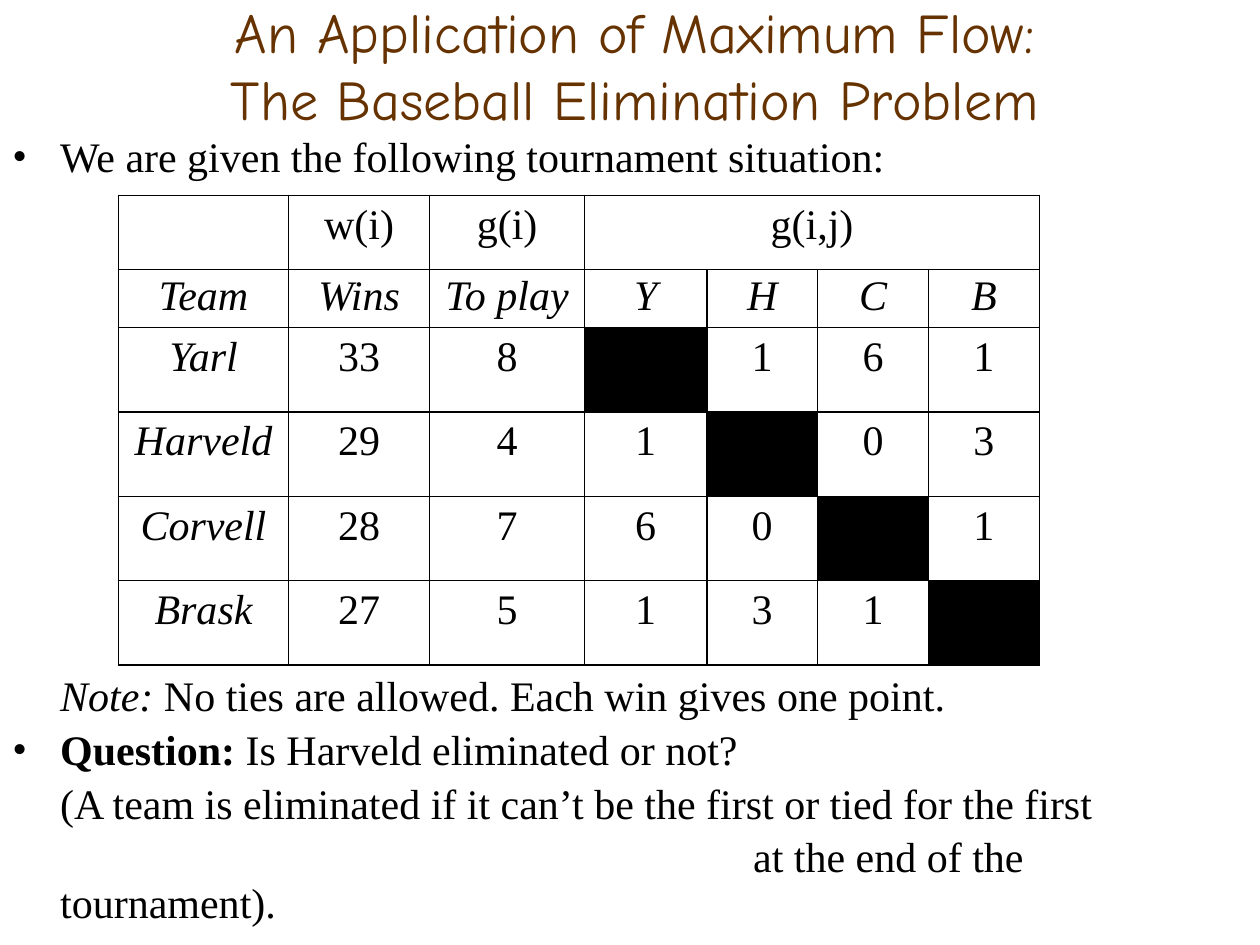
from dataclasses import dataclass

from lxml import etree
from pptx import Presentation
from pptx.dml.color import RGBColor
from pptx.enum.text import MSO_ANCHOR, MSO_AUTO_SIZE, PP_ALIGN
from pptx.oxml.ns import qn
from pptx.util import Inches, Pt

CENTER = PP_ALIGN.CENTER
MIDDLE = MSO_ANCHOR.MIDDLE
NO_AUTOFIT = MSO_AUTO_SIZE.NONE
TITLE_ONLY = 5
WIDTH, HEIGHT = 10, 7.5


@dataclass(frozen=True)
class Theme:
    title_font: str = "Comic Neue"
    body_font: str = "Times New Roman"
    title_size: int = 32
    body_size: int = 24
    brown: RGBColor = RGBColor(0x66, 0x33, 0x00)
    black: RGBColor = RGBColor(0, 0, 0)
    white: RGBColor = RGBColor(255, 255, 255)
    border: float = 1
    cell_margin: float = 0.03
    hanging: float = 0.38
    line_spacing: float = 0.9
    space_before: float = 4.8


THEME = Theme()
TITLE_FORMAT = {"name": THEME.title_font, "size": Pt(THEME.title_size), "bold": False}
BODY_FORMAT = {"name": THEME.body_font, "size": Pt(THEME.body_size)}

TITLE = "An Application of Maximum Flow:\vThe Baseball Elimination Problem"
# Each paragraph: bullet, first-line indent, runs of (text, extra format).
INTRODUCTION = [
    (True, -THEME.hanging, [("We are given the following tournament situation:", {})]),
]
QUESTION = [
    (False, 0, [("Note:", {"italic": True}),
                (" No ties are allowed. Each win gives one point.", {})]),
    (True, -THEME.hanging, [("Question:", {"bold": True}),
                            (" Is Harveld eliminated or not?", {})]),
    (False, 0, [("(A team is eliminated if it can’t be the first or tied for the first", {})]),
    (False, 5.5, [("at the end of the tournament).", {})]),
]

COLUMNS = [1.35, 1.12, 1.23, 0.97, 0.88, 0.88, 0.88]
ROWS = [0.59, 0.44] + [0.67] * 4
NAMES_ROW = 1
FIRST_GAME_ROW, FIRST_GAME_COLUMN = 2, 3
STANDINGS = [
    ["", "w(i)", "g(i)", "g(i,j)", "", "", ""],
    ["Team", "Wins", "To play", "Y", "H", "C", "B"],
    ["Yarl", "33", "8", "", "1", "6", "1"],
    ["Harveld", "29", "4", "1", "", "0", "3"],
    ["Corvell", "28", "7", "6", "0", "", "1"],
    ["Brask", "27", "5", "1", "3", "1", ""],
]


def apply_font(font, color, values):
    for name, value in values.items():
        setattr(font, name, value)
    font.color.rgb = color


def place(box):
    """Turn shares of the slide into left, top, width and height."""
    return [Inches(share * side) for share, side in zip(box, (WIDTH, HEIGHT) * 2)]


def add_title(slide, box):
    title = slide.shapes.title
    title.left, title.top, title.width, title.height = place(box)
    frame = title.text_frame
    frame.text = TITLE
    frame.auto_size = NO_AUTOFIT
    frame.vertical_anchor = MIDDLE
    paragraph = frame.paragraphs[0]
    paragraph.alignment = CENTER
    for run in paragraph.runs:
        apply_font(run.font, THEME.brown, TITLE_FORMAT)


def set_bullet(paragraph, bullet, first_indent):
    properties = paragraph._p.get_or_add_pPr()
    properties.set("marL", str(Inches(THEME.hanging)))
    properties.set("indent", str(Inches(first_indent)))
    if bullet:
        etree.SubElement(properties, qn("a:buFont"), typeface=THEME.body_font)
        etree.SubElement(properties, qn("a:buChar")).set("char", "•")
    else:
        etree.SubElement(properties, qn("a:buNone"))


def add_points(slide, box, points):
    frame = slide.shapes.add_textbox(*place(box)).text_frame
    frame.word_wrap = True
    for index, (bullet, first_indent, runs) in enumerate(points):
        paragraph = frame.add_paragraph() if index else frame.paragraphs[0]
        paragraph.line_spacing = THEME.line_spacing
        if index:
            paragraph.space_before = Pt(THEME.space_before)
        set_bullet(paragraph, bullet, first_indent)
        for text, extra in runs:
            run = paragraph.add_run()
            run.text = text
            apply_font(run.font, THEME.black, BODY_FORMAT | extra)


def add_borders(cell):
    properties = cell._tc.get_or_add_tcPr()
    for side in ("a:lnL", "a:lnR", "a:lnT", "a:lnB"):
        line = etree.SubElement(properties, qn(side), w=str(Pt(THEME.border)))
        fill = etree.SubElement(line, qn("a:solidFill"))
        etree.SubElement(fill, qn("a:srgbClr"), val=str(THEME.black))


def add_standings(slide, box):
    frame = slide.shapes.add_table(len(ROWS), len(COLUMNS), *place(box))
    table = frame.table
    table.first_row = table.horz_banding = False
    for column, width in zip(table.columns, COLUMNS):
        column.width = Inches(width)
    for row, height in zip(table.rows, ROWS):
        row.height = Inches(height)
    for row_index, texts in enumerate(STANDINGS):
        for column_index, text in enumerate(texts):
            cell = table.cell(row_index, column_index)
            add_borders(cell)
            if row_index == NAMES_ROW:
                cell.margin_top = cell.margin_bottom = Inches(THEME.cell_margin)
            own_game = (row_index >= FIRST_GAME_ROW and
                        row_index - FIRST_GAME_ROW == column_index - FIRST_GAME_COLUMN)
            cell.fill.solid()
            cell.fill.fore_color.rgb = THEME.black if own_game else THEME.white
            paragraph = cell.text_frame.paragraphs[0]
            paragraph.alignment = CENTER
            if text:
                run = paragraph.add_run()
                run.text = text
                italic = row_index == NAMES_ROW or column_index == 0
                apply_font(run.font, THEME.black, BODY_FORMAT | {"italic": italic})
    table.cell(0, FIRST_GAME_COLUMN).merge(table.cell(0, len(COLUMNS) - 1))


def main():
    presentation = Presentation()
    presentation.slide_width = Inches(WIDTH)
    presentation.slide_height = Inches(HEIGHT)
    slide = presentation.slides.add_slide(presentation.slide_layouts[TITLE_ONLY])
    add_title(slide, (0.083, 0, 0.842, 1.03 / HEIGHT))
    add_points(slide, (0, 1.03 / HEIGHT, 1, 0.5 / HEIGHT), INTRODUCTION)
    add_standings(slide, (0.094, 1.55 / HEIGHT, sum(COLUMNS) / WIDTH, sum(ROWS) / HEIGHT))
    add_points(slide, (0, 5.31 / HEIGHT, 0.98, 2.19 / HEIGHT), QUESTION)
    presentation.save("out.pptx")


if __name__ == "__main__":
    main()
